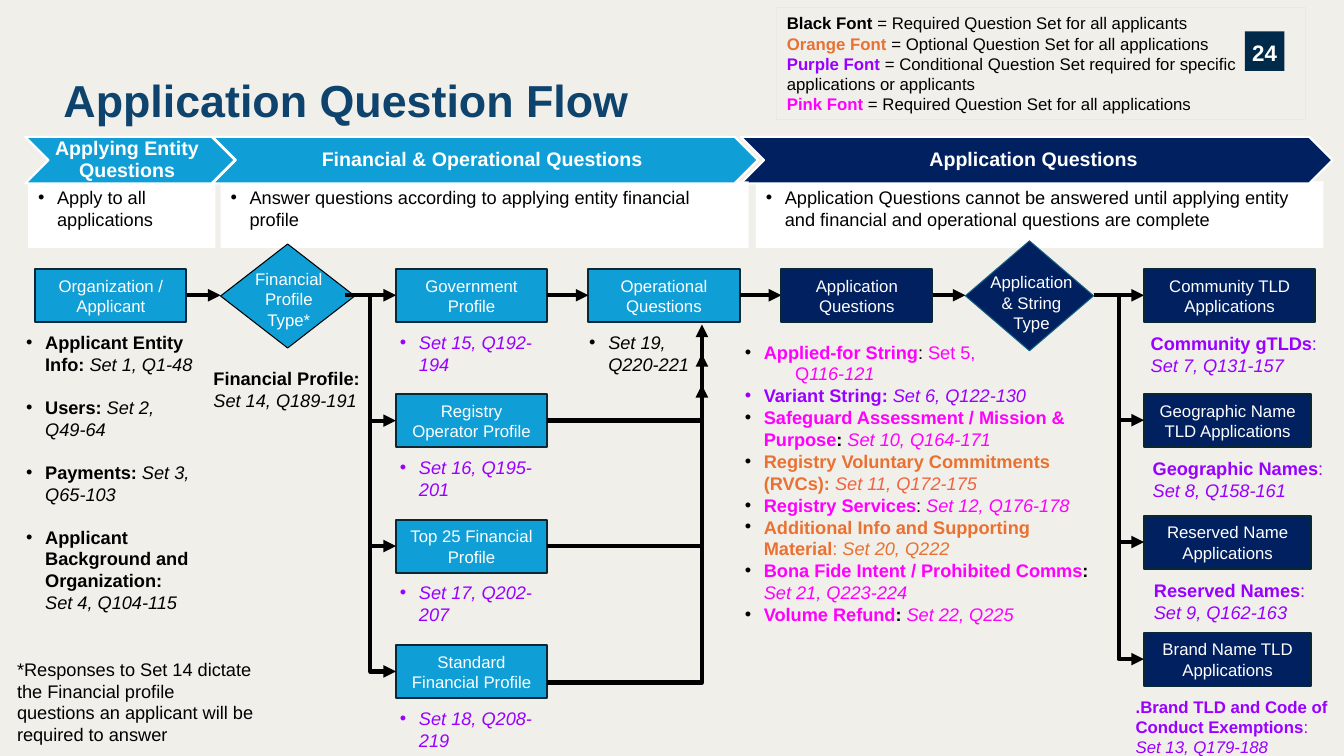
from itertools import zip_longest
from typing import NamedTuple

from lxml.etree import SubElement
from pptx import Presentation
from pptx.dml.color import RGBColor
from pptx.enum.shapes import MSO_CONNECTOR, MSO_SHAPE
from pptx.enum.text import MSO_ANCHOR, PP_ALIGN
from pptx.oxml.ns import qn
from pptx.util import Cm, Pt

BLACK, WHITE, NAVY, BLUE = "000000", "FFFFFF", "002060", "0F9ED5"
PURPLE, PINK, ORANGE = "9900FF", "FF00FF", "E97132"
STEP_WIDTH, STEP_HEIGHT, STEP_MIDDLE = 3.81, 1.33, 0.66
INDENT = 0.48


class Box(NamedTuple):
    """A rectangle in centimetres."""
    left: float
    top: float
    width: float
    height: float

    def inner(self, dx, dy, width, height):
        """Return a rectangle placed relative to this one."""
        return Box(self.left + dx, self.top + dy, width, height)


def rgb(code):
    """Turn a hex string into a colour."""
    return RGBColor.from_string(code)


def set_bullet(paragraph, color):
    """Give a paragraph a hanging bullet, or a deeper indent without one."""
    properties = paragraph._p.get_or_add_pPr()
    properties.set("marL", str(Cm(INDENT if color else 1.27)))
    properties.set("indent", str(Cm(-INDENT if color else 0)))
    if color:
        SubElement(SubElement(properties, qn("a:buClr")), qn("a:srgbClr"), val=color)
        SubElement(properties, qn("a:buFont"), typeface="Arial")
        SubElement(properties, qn("a:buChar"), char="•")


def write(shape, paragraphs, size=13, color=BLACK, marks="", align=PP_ALIGN.LEFT,
          anchor=MSO_ANCHOR.TOP, margins=(0.25, 0.13, 0.25, 0.13), bullets=(),
          spacing=None, gap=0):
    """Write paragraphs, each a string or a list of (text, color, marks) runs."""
    frame = shape.text_frame
    frame.word_wrap = True
    frame.vertical_anchor = anchor
    (frame.margin_left, frame.margin_top,
     frame.margin_right, frame.margin_bottom) = map(Cm, margins)
    for index, (content, bullet) in enumerate(zip_longest(paragraphs, bullets)):
        paragraph = frame.add_paragraph() if index else frame.paragraphs[0]
        paragraph.alignment = align
        if spacing:
            paragraph.line_spacing = spacing
        if index and gap:
            paragraph.space_before = Pt(gap)
        if bullets:
            set_bullet(paragraph, bullet)
        runs = [(content, color, marks)] if isinstance(content, str) else content
        for text, run_color, run_marks in runs:
            run = paragraph.add_run()
            run.text = text
            run.font.name, run.font.size = "Arial", Pt(size)
            run.font.color.rgb = rgb(run_color)
            run.font.bold, run.font.italic = "b" in run_marks, "i" in run_marks


def add_label(slide, box, paragraphs, **text_format):
    """Add a text box."""
    write(slide.shapes.add_textbox(*map(Cm, box)), paragraphs, **text_format)


def add_block(slide, kind, box, fill=None, line=None, weight=1.5):
    """Add a flat preset shape."""
    block = slide.shapes.add_shape(kind, *map(Cm, box))
    block.shadow.inherit = False
    if fill:
        block.fill.solid()
        block.fill.fore_color.rgb = rgb(fill)
    else:
        block.fill.background()
    if line:
        block.line.color.rgb = rgb(line)
        block.line.width = Pt(weight)
    else:
        block.line.fill.background()
    return block


def add_arrow(slide, start, end, kind=MSO_CONNECTOR.STRAIGHT, preset=None):
    """Add a thick black arrow between two points."""
    arrow = slide.shapes.add_connector(kind, *map(Cm, (*start, *end)))
    arrow.line.color.rgb = rgb(BLACK)
    arrow.line.width = Pt(3)
    properties = arrow._element.spPr
    SubElement(properties.find(qn("a:ln")), qn("a:tailEnd"), type="triangle")
    SubElement(properties, qn("a:effectLst"))
    if preset:
        properties.find(qn("a:prstGeom")).set("prst", preset)


def add_step(slide, box, text, fill):
    """Add one step of the flow."""
    step = add_block(slide, MSO_SHAPE.RECTANGLE, box, fill, "082836")
    write(step, [text], size=12, color=WHITE, align=PP_ALIGN.CENTER, anchor=MSO_ANCHOR.MIDDLE)


def add_decision(slide, box, text_box, text, fill, line):
    """Add a diamond with its question."""
    add_block(slide, MSO_SHAPE.DIAMOND, box, fill, line, 0.75)
    add_label(slide, text_box, [text], size=12, color=WHITE, align=PP_ALIGN.CENTER, margins=(0,) * 4)


def add_header(slide, box):
    """Place the page number, title and font legend."""
    number = add_block(slide, MSO_SHAPE.RECTANGLE, box.inner(31.37, 0.79, 1, 1), "002A49")
    write(number, ["24"], size=16, color=WHITE, marks="b", align=PP_ALIGN.CENTER,
          anchor=MSO_ANCHOR.MIDDLE, margins=(0,) * 4, spacing=1.14)
    add_label(slide, box.inner(1.6, 1.7, 20.73, 1.6), ["Application Question Flow"], size=32,
              color="0D436C", marks="b", anchor=MSO_ANCHOR.MIDDLE, margins=(0,) * 4)
    legend = add_block(slide, MSO_SHAPE.RECTANGLE, box.inner(19.58, 0.2, 13.31, 2.82),
                       line="E8E8E8", weight=0.75)
    meanings = [
        ("Black Font", BLACK, "Required Question Set for all applicants"),
        ("Orange Font", ORANGE, "Optional Question Set for all applications"),
        ("Purple Font", PURPLE, "Conditional Question Set required for specific applications or applicants"),
        ("Pink Font", PINK, "Required Question Set for all applications")]
    write(legend, [[(name, color, "b"), (f" = {meaning}", BLACK, "")]
                   for name, color, meaning in meanings], size=12)


def add_banner(slide, box, trim, heading, note, fill):
    """Place a chevron heading over its white note."""
    left, right = trim
    explanation = add_block(slide, MSO_SHAPE.RECTANGLE,
                            box.inner(left, 1.12, box.width - left - right, 1.68), WHITE)
    write(explanation, [note], bullets=[BLACK])
    chevron = add_block(slide, MSO_SHAPE.CHEVRON, box.inner(0, 0, box.width, 1.17), fill, WHITE)
    write(chevron, [heading], size=14, color=WHITE, marks="b", align=PP_ALIGN.CENTER,
          anchor=MSO_ANCHOR.MIDDLE, margins=(0, 0.08, 0.15, 0.08), spacing=0.9)


def add_applicant(slide, box):
    """Place the applicant step, its question sets and the footnote."""
    add_step(slide, box.inner(0, 0, STEP_WIDTH, STEP_HEIGHT), "Organization / Applicant", BLUE)
    sets = [("Applicant Entity Info: ", "Set 1, Q1-48"), ("Users: ", "Set 2, Q49-64"),
            ("Payments: ", "Set 3, Q65-103"),
            ("Applicant Background and Organization: ", "Set 4, Q104-115")]
    add_label(slide, box.inner(-0.48, 1.45, 4.72, 7.49),
              [[(name, BLACK, "b"), (questions, BLACK, "i")] for name, questions in sets],
              bullets=[BLACK] * len(sets), gap=15)
    add_label(slide, box.inner(-0.71, 9.55, 6.5, 2.77),
              ["*Responses to Set 14 dictate the Financial profile questions "
               "an applicant will be required to answer"], margins=(0.25,) * 4)
    add_arrow(slide, (box.left + STEP_WIDTH, box.top + STEP_MIDDLE),
              (box.left + 4.67, box.top + STEP_MIDDLE))


def add_profiles(slide, box):
    """Place the financial decision, its profiles and the operational step."""
    middle = box.top + STEP_MIDDLE
    profile_left, operations_left = box.left + 4.42, box.left + 9.27
    profile_right = profile_left + STEP_WIDTH
    add_decision(slide, box.inner(0, -0.63, 3.38, 2.62), box.inner(0.64, 0, 2.16, 1.55),
                 "Financial Profile Type*", BLUE, BLACK)
    add_label(slide, box.inner(-0.43, 2.34, 4.24, 1.37),
              [[("Financial Profile: ", BLACK, "b"), ("Set 14, Q189-191", BLACK, "i")]])
    add_step(slide, box.inner(9.27, 0, STEP_WIDTH, STEP_HEIGHT), "Operational Questions", BLUE)
    add_label(slide, box.inner(9.04, 1.45, 3.81, 1.37), ["Set 19, Q220-221"],
              marks="i", bullets=[BLACK])
    profiles = [("Government Profile", "Set 15, Q192-194", None),
                ("Registry Operator Profile", "Set 16, Q195-201", 2.92),
                ("Top 25 Financial Profile", "Set 17, Q202-207", 2.14),
                ("Standard Financial Profile", "Set 18, Q208-219", 1.4)]
    for row, (name, questions, merge_end) in enumerate(profiles):
        offset = row * 3.16
        add_step(slide, box.inner(4.42, offset, STEP_WIDTH, STEP_HEIGHT), name, BLUE)
        add_label(slide, box.inner(4.27, offset + 1.43, 4.32, 1.37), [questions],
                  color=PURPLE, marks="i", bullets=[PURPLE])
        if row:
            add_arrow(slide, (box.left + 3.13, middle), (profile_left, middle + offset),
                      MSO_CONNECTOR.ELBOW)
            drop = 0.28 if row == 3 else 0
            add_arrow(slide, (profile_right, middle + offset + drop),
                      (box.left + 12.13, box.top + merge_end), MSO_CONNECTOR.ELBOW, "bentConnector2")
    for start, end in [(box.left + 3.38, profile_left), (profile_right, operations_left),
                       (operations_left + STEP_WIDTH, box.left + box.width)]:
        add_arrow(slide, (start, middle), (end, middle))


def add_application(slide, box):
    """Place the application step, its question sets and the type decision."""
    middle = box.top + STEP_MIDDLE
    add_step(slide, box.inner(0, 0, STEP_WIDTH, STEP_HEIGHT), "Application Questions", NAVY)
    add_decision(slide, box.inner(4.64, -0.71, 3.23, 2.77), box.inner(5.1, 0.08, 2.41, 1.55),
                 "Application & String Type", NAVY, "156082")
    sets = [
        [("Applied-for String", PINK, "b"), (": ", BLACK, ""), ("Set 5,", PINK, "")],
        [("Q", PINK, ""), ("116-121", PINK, "i")],
        [("Variant String: ", PURPLE, "b"), ("Set 6, Q122-130", PURPLE, "i")],
        [("Safeguard Assessment / Mission & Purpose", PINK, "b"), (": ", BLACK, "b"),
         ("Set 10, Q164-171", PINK, "i")],
        [("Registry Voluntary Commitments (RVCs): ", ORANGE, "b"), ("Set 11, Q172-175", "F1633E", "i")],
        [("Registry Services", PINK, "b"), (": ", BLACK, ""), ("Set 12, Q176-178", PINK, "i")],
        [("Additional Info and Supporting Material", ORANGE, "b"), (": ", ORANGE, ""),
         ("Set 20, Q222", ORANGE, "i")],
        [("Bona Fide Intent / Prohibited Comms", PINK, "b"), (": ", BLACK, "b"),
         ("Set 21, Q223-224", PINK, "i")],
        [("Volume Refund", PINK, "b"), (": ", BLACK, "b"), ("Set 22, Q225", PINK, "i")]]
    add_label(slide, box.inner(-1.17, 1.68, 9.35, 8.59), sets,
              bullets=[BLACK, None, PURPLE] + [BLACK] * 6)
    for start, end in [(STEP_WIDTH, 4.64), (7.87, box.width)]:
        add_arrow(slide, (box.left + start, middle), (box.left + end, middle))


def add_name_types(slide, box):
    """Place the kinds of application with their question sets."""
    middle = box.top + STEP_MIDDLE
    kinds = [
        (0, 4.32, "Community TLD Applications", "Community gTLDs", "Set 7, Q131-157", -0.08, 13),
        (3.15, 4.22, "Geographic Name TLD Applications", "Geographic Names", "Set 8, Q158-161", -0.03, 13),
        (6.22, 4.22, "Reserved Name Applications", "Reserved Names", "Set 9, Q162-163", 0, 13),
        (9.17, 4.22, "Brand Name TLD Applications", ".Brand TLD and Code of Conduct Exemptions",
         "Set 13, Q179-188", -0.46, 12)]
    for offset, width, name, topic, questions, shift, size in kinds:
        add_step(slide, box.inner(0, offset, width, STEP_HEIGHT), name, NAVY)
        add_label(slide, box.inner(shift, offset + 1.47, 4.83 if size == 13 else 5.51, 1.37),
                  [[(topic, PURPLE, "b"), (":", PURPLE, "")], [(questions, PURPLE, "i")]], size=size)
        if offset:
            add_arrow(slide, (box.left - 1.27, middle), (box.left, middle + offset), MSO_CONNECTOR.ELBOW)


def main():
    """Build and save the slide."""
    deck = Presentation()
    deck.slide_width, deck.slide_height = Cm(33.87), Cm(19.05)
    slide = deck.slides.add_slide(deck.slide_layouts[6])
    slide.background.fill.solid()
    slide.background.fill.fore_color.rgb = rgb("F1EFEA")
    add_header(slide, Box(0, 0, 33.87, 3.3))
    add_banner(slide, Box(0.64, 3.45, 5.28, 2.8), (0.07, 0.49), "Applying Entity Questions",
               "Apply to all applications", BLUE)
    add_banner(slide, Box(18.67, 3.45, 14.91, 2.8), (0.38, 0.23), "Application Questions",
               "Application Questions cannot be answered until applying entity "
               "and financial and operational questions are complete", NAVY)
    add_banner(slide, Box(5.36, 3.45, 13.74, 2.8), (0.2, 0.23), "Financial & Operational Questions",
               "Answer questions according to applying entity financial profile", BLUE)
    add_applicant(slide, Box(0.89, 6.78, 4.67, 12.27))
    add_profiles(slide, Box(5.56, 6.78, 14.13, 12.27))
    add_application(slide, Box(19.69, 6.78, 9.14, 12.27))
    add_name_types(slide, Box(28.83, 6.78, 5.04, 12.27))
    deck.save("out.pptx")


if __name__ == "__main__":
    main()
